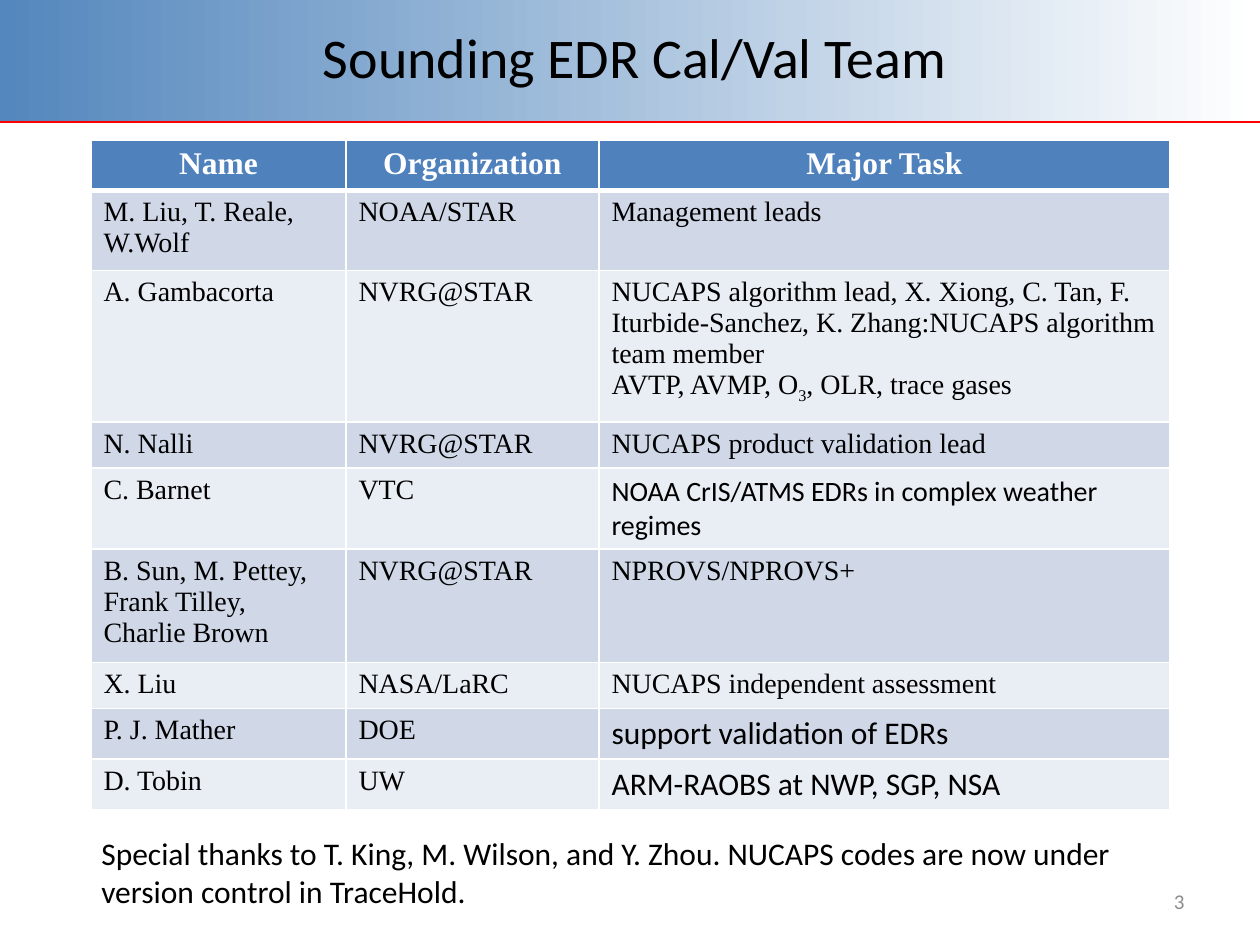
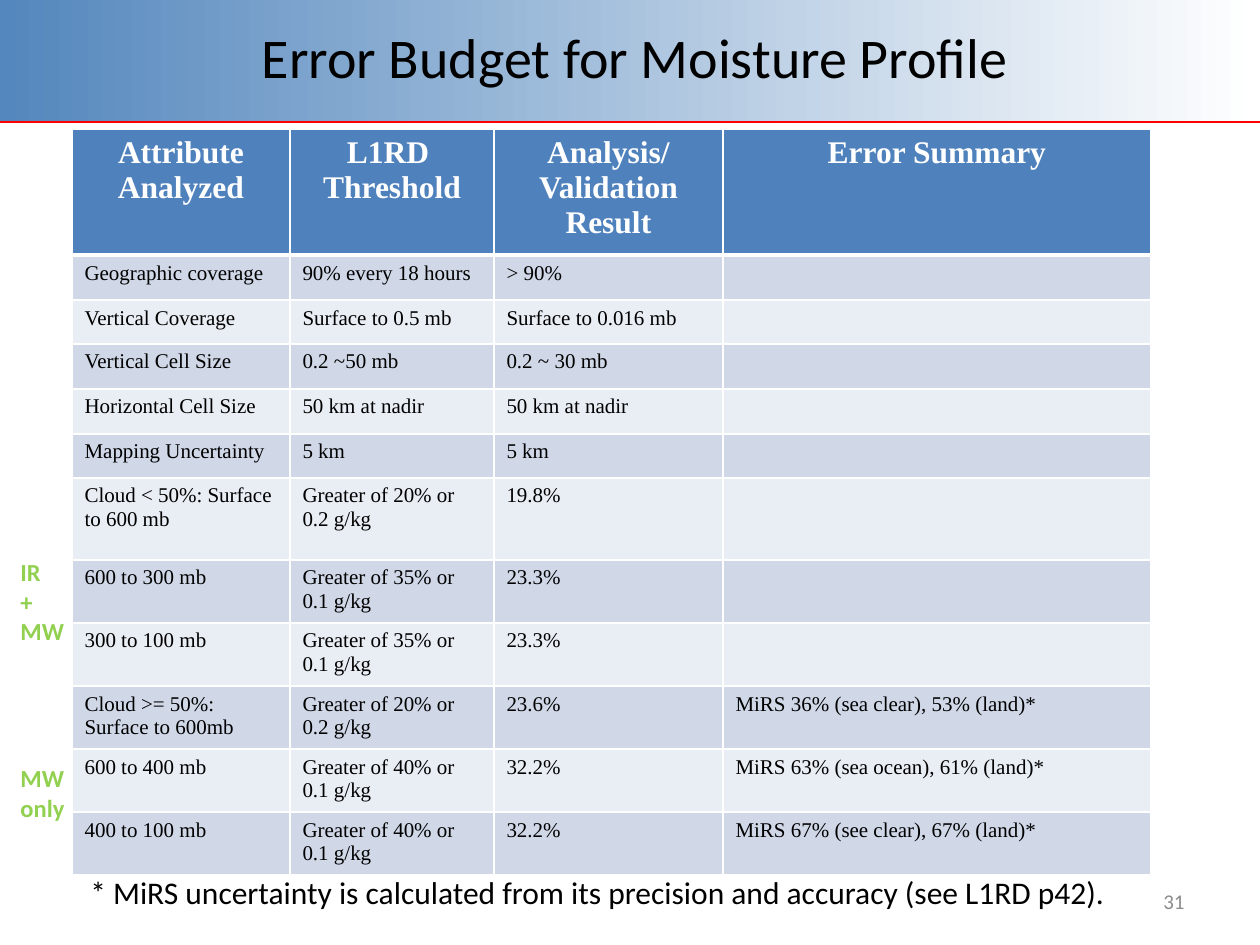
from dataclasses import dataclass, replace

from lxml.etree import SubElement
from pptx import Presentation
from pptx.dml.color import RGBColor
from pptx.enum.shapes import MSO_CONNECTOR as Connector, MSO_SHAPE as Shape
from pptx.enum.text import MSO_ANCHOR as Anchor, MSO_AUTO_SIZE as AutoSize, PP_ALIGN as Align
from pptx.oxml import parse_xml
from pptx.oxml.ns import nsdecls, qn
from pptx.util import Emu, Pt

PX_PER_INCH = 126
PAGE_WIDTH, PAGE_HEIGHT = 1260, 945
BAND_BOTTOM = 122
TITLE_ONLY = 5


@dataclass(frozen=True)
class Style:
    font: str
    size: int
    color: str = "000000"
    bold: bool = False


class Theme:
    band_start, band_end, rule = "5487BD", "FFFFFF", "FF0000"
    header_fill, row_fills = "4F81BD", ("D0D8E8", "E9EDF4")
    border, border_width, header_border_width = "FFFFFF", 1, 3
    title = Style("Calibri", 32)
    number = Style("Calibri", 12, "8C8C8C")
    note = Style("Calibri", 18)
    side_label = Style("Calibri", 14, "92D050", True)
    header = Style("Times New Roman", 18, "FFFFFF", True)
    team_body = Style("Times New Roman", 16)
    budget_body = Style("Times New Roman", 12)


TEAM_ROWS = [
    ("Name", "Organization", "Major Task"),
    ("M. Liu, T. Reale, W.Wolf", "NOAA/STAR", "Management leads"),
    ("A. Gambacorta", "NVRG@STAR",
     "NUCAPS algorithm lead, X. Xiong, C. Tan, F. Iturbide-Sanchez, "
     "K. Zhang:NUCAPS algorithm team member\nAVTP, AVMP, O|3|, OLR, trace gases"),
    ("N. Nalli", "NVRG@STAR", "NUCAPS product validation lead"),
    ("C. Barnet", "VTC", "NOAA CrIS/ATMS EDRs in complex weather regimes"),
    ("B. Sun, M. Pettey, Frank Tilley, Charlie Brown", "NVRG@STAR", "NPROVS/NPROVS+"),
    ("X. Liu", "NASA/LaRC", "NUCAPS independent assessment"),
    ("P. J. Mather", "DOE", "support validation of EDRs"),
    ("D. Tobin", "UW", "ARM-RAOBS at NWP, SGP, NSA"),
]
BUDGET_ROWS = [
    ("Attribute\nAnalyzed", "L1RD \nThreshold", "Analysis/Validation Result", "Error Summary"),
    ("Geographic coverage", "90% every 18 hours", "> 90%", ""),
    ("Vertical Coverage", "Surface to 0.5 mb", "Surface to 0.016 mb", ""),
    ("Vertical Cell Size", "0.2 ~50 mb", "0.2 ~ 30 mb", ""),
    ("Horizontal Cell Size", "50 km at nadir", "50 km at nadir", ""),
    ("Mapping Uncertainty", "5 km", "5 km", ""),
    ("Cloud < 50%: Surface to 600 mb", "Greater of 20% or 0.2 g/kg", "19.8%", ""),
    ("600 to 300 mb", "Greater of 35% or 0.1 g/kg", "23.3%", ""),
    ("300 to 100 mb", "Greater of 35% or 0.1 g/kg", "23.3%", ""),
    ("Cloud >= 50%: Surface to 600mb", "Greater of 20% or 0.2 g/kg", "23.6%",
     "MiRS 36% (sea clear), 53% (land)*"),
    ("600 to 400 mb", "Greater of 40% or 0.1 g/kg", "32.2%",
     "MiRS 63% (sea ocean), 61% (land)*"),
    ("400 to 100 mb", "Greater of 40% or 0.1 g/kg", "32.2%",
     "MiRS 67% (see clear), 67% (land)*"),
]


def px(length):
    return Emu(round(length * 914400 / PX_PER_INCH))


def rgb(color):
    return RGBColor.from_string(color)


def write(frame, text, style, align=Align.LEFT):
    """Write lines split at newlines; a piece between bars becomes a subscript."""
    frame.text = text
    for para in frame.paragraphs:
        para.alignment = align
        if "|" in para.text:
            pieces = para.text.split("|")
            para.text = pieces[0]
            for index, piece in enumerate(pieces[1:], 1):
                span = para.add_run()
                span.text = piece
                if index % 2:
                    span.font._element.set("baseline", "-25000")
        for span in para.runs:
            span.font.name = style.font
            span.font.size = Pt(style.size)
            span.font.bold = style.bold
            span.font.color.rgb = rgb(style.color)
        if not para.runs:
            # Keeps an empty cell from growing to the default type size
            SubElement(para._p, qn("a:endParaRPr"), sz=str(style.size * 100))


# Shared frame of every page
def add_band(deck, page):
    """Draw the band and its rule, then move them to the back of the master."""
    band = page.shapes.add_shape(Shape.RECTANGLE, 0, px(-1), px(PAGE_WIDTH), px(BAND_BOTTOM))
    band.shadow.inherit = False
    band.line.fill.background()
    band.fill.gradient()
    band.fill.gradient_angle = 0
    for stop, color in zip(band.fill.gradient_stops, (Theme.band_start, Theme.band_end)):
        stop.color.rgb = rgb(color)

    rule = page.shapes.add_connector(
        Connector.STRAIGHT, 0, px(BAND_BOTTOM), px(PAGE_WIDTH), px(BAND_BOTTOM))
    rule.line.color.rgb = rgb(Theme.rule)
    rule.line.width = Pt(1.25)
    SubElement(rule.element.spPr, qn("a:effectLst"))

    for index, part in enumerate((band, rule)):
        part.element.xpath(".//p:cNvPr")[0].set("id", str(100 + index))
        deck.slide_master.shapes.element.insert(2 + index, part.element)


def add_page(deck, title, number):
    page = deck.slides.add_slide(deck.slide_layouts[TITLE_ONLY])
    heading = page.shapes.title
    heading.left, heading.top, heading.width, heading.height = map(px, (136, 0, 998, 113))
    heading.text_frame.vertical_anchor = Anchor.MIDDLE
    write(heading.text_frame, title, Theme.title, Align.CENTER)

    corner = page.shapes.add_textbox(*map(px, (903, 876, 294, 50)))
    corner.text_frame.word_wrap = True
    corner.text_frame.vertical_anchor = Anchor.MIDDLE
    write(corner.text_frame, number, Theme.number, Align.RIGHT)
    return page


def add_note(page, box, text, style):
    note = page.shapes.add_textbox(*map(px, box))
    note.text_frame.word_wrap = False
    note.text_frame.auto_size = AutoSize.SHAPE_TO_FIT_TEXT
    write(note.text_frame, text, style)


# Tables
def set_borders(cell, row):
    widths = dict.fromkeys("LRTB", Theme.border_width)
    if row == 0:
        widths["B"] = Theme.header_border_width
    elif row == 1:
        widths["T"] = Theme.header_border_width
    properties = cell._tc.get_or_add_tcPr()
    for index, (side, width) in enumerate(widths.items()):
        properties.insert(index, parse_xml(
            f'<a:ln{side} {nsdecls("a")} w="{Pt(width)}"><a:solidFill>'
            f'<a:srgbClr val="{Theme.border}"/></a:solidFill></a:ln{side}>'))


def add_grid(page, left, top, widths, heights, rows, body, special=None):
    """Add a table; special maps (row, column) to a style that differs from body."""
    special = special or {}
    box = map(px, (left, top, sum(widths), sum(heights)))
    table = page.shapes.add_table(len(rows), len(widths), *box).table
    for column, width in zip(table.columns, widths):
        column.width = px(width)
    for row, (texts, height) in enumerate(zip(rows, heights)):
        table.rows[row].height = px(height)
        for column, text in enumerate(texts):
            cell = table.cell(row, column)
            cell.fill.solid()
            if row == 0:
                cell.fill.fore_color.rgb = rgb(Theme.header_fill)
                write(cell.text_frame, text, Theme.header, Align.CENTER)
            else:
                cell.fill.fore_color.rgb = rgb(Theme.row_fills[(row - 1) % 2])
                write(cell.text_frame, text, special.get((row, column), body))
            set_borders(cell, row)


# Pages
def add_team_page(deck):
    page = add_page(deck, "Sounding EDR Cal/Val Team", "3")
    special = {(4, 2): replace(Theme.team_body, font="Calibri"),
               (7, 2): Theme.note, (8, 2): Theme.note}
    add_grid(page, 91, 140, (255, 253, 571), (49, 75, 141, 45, 81, 106, 45, 50, 51),
             TEAM_ROWS, Theme.team_body, special)
    add_note(page, (89, 828, 1046, 89),
             "Special thanks to T. King, M. Wilson, and Y. Zhou. NUCAPS codes are now under\n"
             "version control in TraceHold.", Theme.note)
    return page


def add_budget_page(deck):
    page = add_page(deck, "Error Budget for Moisture Profile", "31")
    heights = (117, *[45, 44, 45, 45, 44], 82, 60, *[59] * 4)
    add_grid(page, 72, 129, (218, 204, 229, 428), heights, BUDGET_ROWS, Theme.budget_body)
    add_note(page, (8, 551, 69, 102), "IR\n+\nMW", Theme.side_label)
    add_note(page, (8, 757, 69, 72), "MW\nonly", Theme.side_label)
    add_note(page, (78, 867, 1045, 50),
             "* MiRS uncertainty is calculated from its precision and accuracy (see L1RD p42).",
             Theme.note)


def main():
    deck = Presentation()
    deck.slide_width, deck.slide_height = px(PAGE_WIDTH), px(PAGE_HEIGHT)
    team_page = add_team_page(deck)
    add_band(deck, team_page)
    add_budget_page(deck)
    deck.save("out.pptx")


if __name__ == "__main__":
    main()
